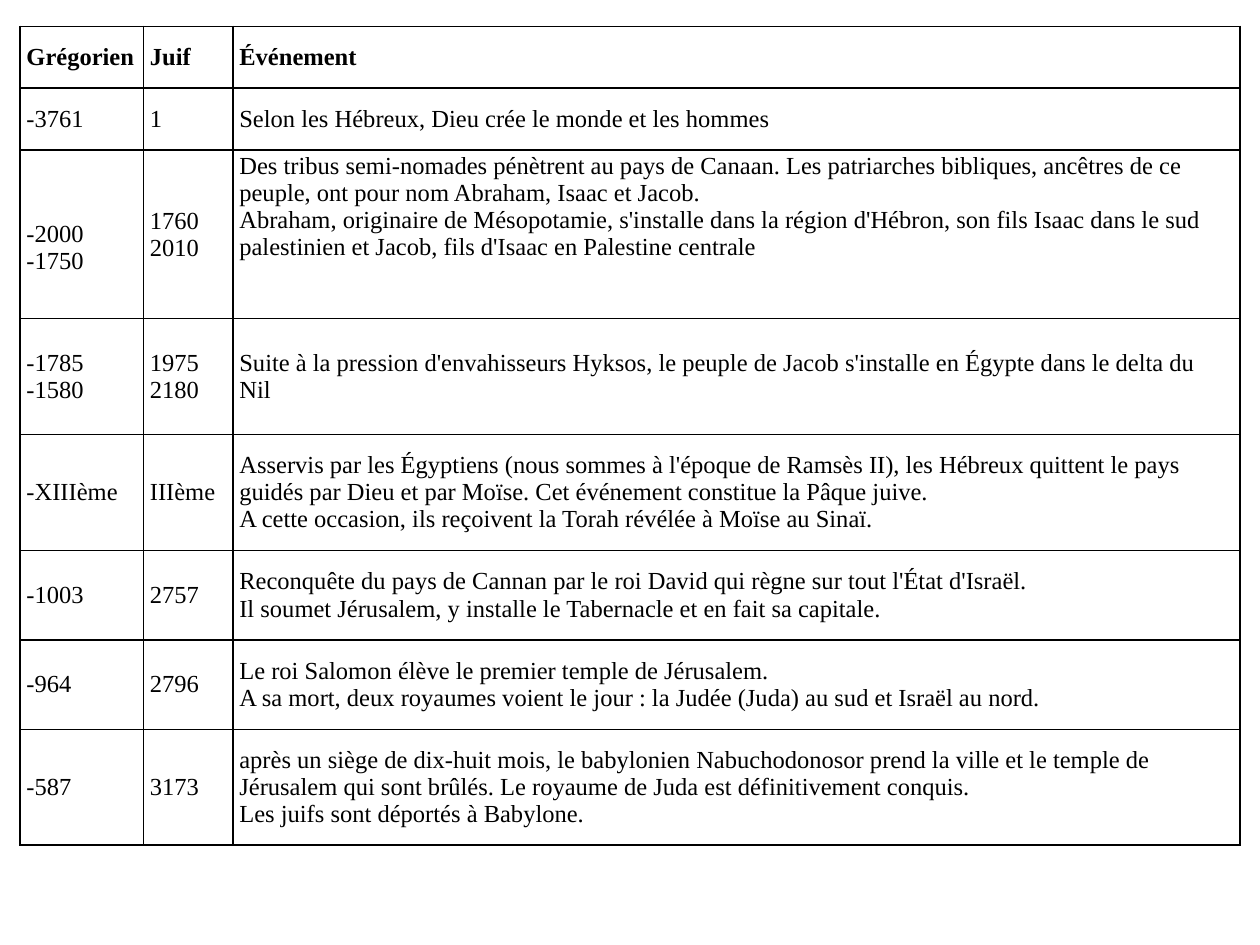
"""Build a slide with a chronology table in Gregorian and Jewish years."""
from typing import NamedTuple

import pptx
import pptx.dml.color
import pptx.enum.text
import pptx.oxml
import pptx.oxml.ns
import pptx.util
from pptx.util import Inches

BLACK = pptx.dml.color.RGBColor(0, 0, 0)
FONT = "Times New Roman"
COLUMN_WIDTHS = (0.98, 0.71, 7.99)
MIDDLE = pptx.enum.text.MSO_ANCHOR.MIDDLE
TOP = pptx.enum.text.MSO_ANCHOR.TOP


class Entry(NamedTuple):
    height: float
    gregorian: str
    jewish: str
    event: str
    event_anchor: pptx.enum.text.MSO_ANCHOR = MIDDLE
    gregorian_drop: float = 0
    bold: bool = False


ENTRIES = (
    Entry(0.49, "Grégorien", "Juif", "Événement", bold=True),
    Entry(0.49, "-3761", "1", "Selon les Hébreux, Dieu crée le monde et les hommes"),
    Entry(1.34, "-2000\v-1750", "1760\v2010",
          "Des tribus semi-nomades pénètrent au pays de Canaan. Les patriarches bibliques, "
          "ancêtres de ce peuple, ont pour nom Abraham, Isaac et Jacob.\v"
          "Abraham, originaire de Mésopotamie, s'installe dans la région d'Hébron, son fils "
          "Isaac dans le sud palestinien et Jacob, fils d'Isaac en Palestine centrale",
          event_anchor=TOP, gregorian_drop=0.22),
    Entry(0.92, "-1785\v-1580", "1975\v2180",
          "Suite à la pression d'envahisseurs Hyksos, le peuple de Jacob s'installe en Égypte "
          "dans le delta du Nil"),
    Entry(0.92, "-XIIIème", "IIIème",
          "Asservis par les Égyptiens (nous sommes à l'époque de Ramsès II), les Hébreux "
          "quittent le pays guidés par Dieu et par Moïse. Cet événement constitue la Pâque "
          "juive.\vA cette occasion, ils reçoivent la Torah révélée à Moïse au Sinaï."),
    Entry(0.71, "-1003", "2757",
          "Reconquête du pays de Cannan par le roi David qui règne sur tout l'État d'Israël.\v"
          "Il soumet Jérusalem, y installe le Tabernacle et en fait sa capitale."),
    Entry(0.71, "-964", "2796",
          "Le roi Salomon élève le premier temple de Jérusalem.\v"
          "A sa mort, deux royaumes voient le jour : la Judée (Juda) au sud et Israël au nord."),
    Entry(0.92, "-587", "3173",
          "après un siège de dix-huit mois, le babylonien Nabuchodonosor prend la ville et le "
          "temple de Jérusalem qui sont brûlés. Le royaume de Juda est définitivement "
          "conquis.\vLes juifs sont déportés à Babylone."),
)


def add_borders(cell) -> None:
    tcPr = cell._tc.get_or_add_tcPr()
    for side in "LRTB":
        tcPr.append(pptx.oxml.parse_xml(
            f'<a:ln{side} {pptx.oxml.ns.nsdecls("a")} w="{pptx.util.Pt(1)}">'
            f'<a:solidFill><a:srgbClr val="{BLACK}"/></a:solidFill></a:ln{side}>'))


def fill_cell(cell, text: str, bold: bool,
              anchor: pptx.enum.text.MSO_ANCHOR = MIDDLE, drop: float = 0) -> None:
    add_borders(cell)
    cell.fill.background()
    cell.vertical_anchor = anchor
    cell.margin_left = cell.margin_right = Inches(0.05)
    cell.margin_top = Inches(0.02 + drop)
    cell.margin_bottom = Inches(0.02)
    p = cell.text_frame.paragraphs[0]
    p.text = text
    p.font.name = FONT
    p.font.size = pptx.util.Pt(14)
    p.font.bold = bold
    p.font.color.rgb = BLACK


def add_chronology(s) -> None:
    table = s.shapes.add_table(
        len(ENTRIES), len(COLUMN_WIDTHS), Inches(0.16), Inches(0.21),
        Inches(sum(COLUMN_WIDTHS)), Inches(sum(e.height for e in ENTRIES))).table
    table.first_row = table.horz_banding = False
    for column, width in zip(table.columns, COLUMN_WIDTHS):
        column.width = Inches(width)
    for row, entry in zip(table.rows, ENTRIES):
        row.height = Inches(entry.height)
        gregorian, jewish, event = row.cells
        fill_cell(gregorian, entry.gregorian, entry.bold, drop=entry.gregorian_drop)
        fill_cell(jewish, entry.jewish, entry.bold)
        fill_cell(event, entry.event, entry.bold, anchor=entry.event_anchor)


def main() -> None:
    prs = pptx.Presentation()
    prs.slide_width, prs.slide_height = Inches(10), Inches(7.5)
    s = prs.slides.add_slide(prs.slide_layouts[6])
    add_chronology(s)
    prs.save("out.pptx")


if __name__ == "__main__":
    main()
